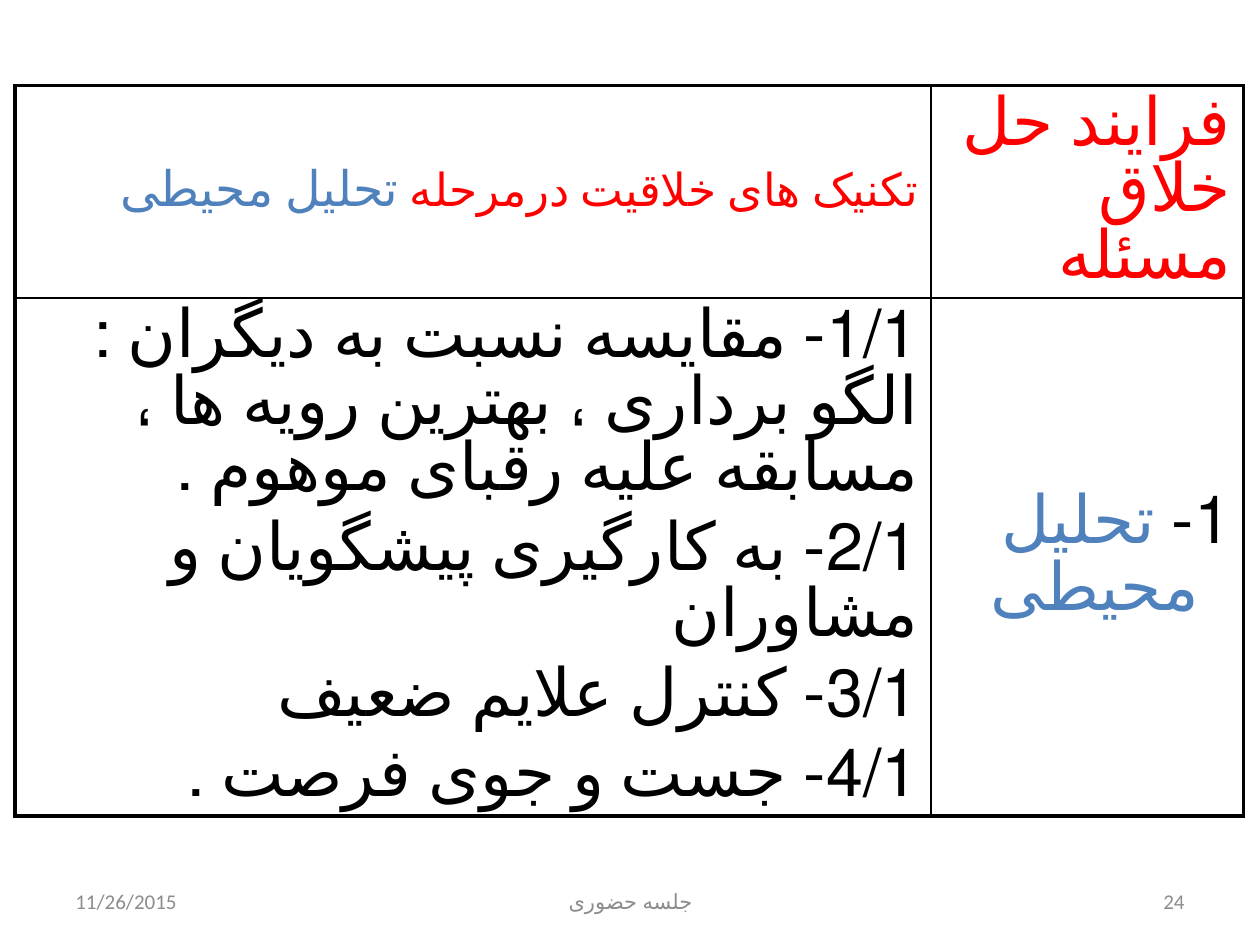
from lxml.etree import SubElement
from pptx import Presentation
from pptx.dml.color import RGBColor
from pptx.enum.lang import MSO_LANGUAGE_ID
from pptx.enum.text import MSO_ANCHOR, PP_ALIGN
from pptx.oxml.ns import qn
from pptx.util import Inches, Pt

BLACK, RED, BLUE, GRAY = "000000", "FF0000", "4F81BD", "8C8C8C"
THIN, THICK = 1, 2.25

HEADERS = [
    [[("تکنیک های خلاقیت درمرحله ", RED, 26), ("تحلیل محیطی", BLUE, 28)]],
    [[("فرایند حل خلاق مسئله", RED, 38)]],
]
TECHNIQUES = [
    "1/1- مقایسه نسبت به دیگران : الگو برداری ، بهترین رویه ها ، مسابقه علیه رقبای موهوم .",
    "2/1- به کارگیری پیشگویان و مشاوران",
    "3/1- کنترل علایم ضعیف",
    "4/1- جست و جوی فرصت .",
]
STAGE = [[("1- ", BLACK, 38), ("تحلیل محیطی", BLUE, 38)]]
ROWS = [HEADERS, [[[(text, BLACK, 38)] for text in TECHNIQUES], STAGE]]
FOOTERS = [
    ("11/26/2015", 0.5, 2.33, PP_ALIGN.LEFT),
    ("جلسه حضوری", 3.42, 3.17, PP_ALIGN.CENTER),
    ("24", 7.17, 2.33, PP_ALIGN.RIGHT),
]


def color(value):
    return RGBColor.from_string(value)


def add_text(paragraph, text, *, size, fill, font="Times New Roman"):
    run = paragraph.add_run()
    run.text = text
    run.font.name = font
    run.font.size = Pt(size)
    run.font.color.rgb = color(fill)
    run.font.language_id = MSO_LANGUAGE_ID.FARSI


def add_footer(slide, text, left, width, alignment):
    shape = slide.shapes.add_textbox(Inches(left), Inches(6.95), Inches(width), Inches(0.4))
    frame = shape.text_frame
    frame.word_wrap = True
    frame.vertical_anchor = MSO_ANCHOR.MIDDLE
    paragraph = frame.paragraphs[0]
    paragraph.alignment = alignment
    add_text(paragraph, text, size=12, fill=GRAY, font="Calibri")


def set_borders(cell, widths):
    properties = cell._tc.get_or_add_tcPr()
    for side, width in widths.items():
        line = SubElement(properties, qn(f"a:ln{side}"), w=str(Pt(width)))
        solid = SubElement(line, qn("a:solidFill"))
        SubElement(solid, qn("a:srgbClr"), val=BLACK)


def fill_cell(cell, paragraphs):
    cell.vertical_anchor = MSO_ANCHOR.MIDDLE
    frame = cell.text_frame
    for index, runs in enumerate(paragraphs):
        paragraph = frame.add_paragraph() if index else frame.paragraphs[0]
        line_height = max(size for _, _, size in runs)
        paragraph.alignment = PP_ALIGN.RIGHT
        paragraph.line_spacing = Pt(line_height)
        paragraph.space_before = Pt(line_height * 0.2 if index else 0)
        properties = paragraph._p.get_or_add_pPr()
        properties.set("rtl", "1")
        if paragraphs is STAGE:
            properties.set("marL", str(Inches(0.25)))
            properties.set("indent", str(-Inches(0.25)))
        for text, fill, size in runs:
            add_text(paragraph, text, size=size, fill=fill)


def add_techniques_table(slide):
    widths, heights = [7.27, 2.48], [1.68, 4.11]
    frame = slide.shapes.add_table(
        2, 2, Inches(0.12), Inches(0.68), Inches(sum(widths)), Inches(sum(heights)))
    table = frame.table
    table.first_row = False
    table.horz_banding = False
    for column, width in zip(table.columns, widths):
        column.width = Inches(width)
    for row, height in zip(table.rows, heights):
        row.height = Inches(height)
    for row_index, row in enumerate(ROWS):
        for column_index, paragraphs in enumerate(row):
            cell = table.cell(row_index, column_index)
            fill_cell(cell, paragraphs)
            set_borders(cell, {
                "L": THIN if column_index else THICK,
                "R": THICK if column_index else THIN,
                "T": THIN if row_index else THICK,
                "B": THICK if row_index else THIN,
            })
            cell.fill.background()


def main():
    presentation = Presentation()
    presentation.slide_width = Inches(10)
    presentation.slide_height = Inches(7.5)
    slide = presentation.slides.add_slide(presentation.slide_layouts[6])
    for footer in FOOTERS:
        add_footer(slide, *footer)
    add_techniques_table(slide)
    presentation.save("out.pptx")


if __name__ == "__main__":
    main()
